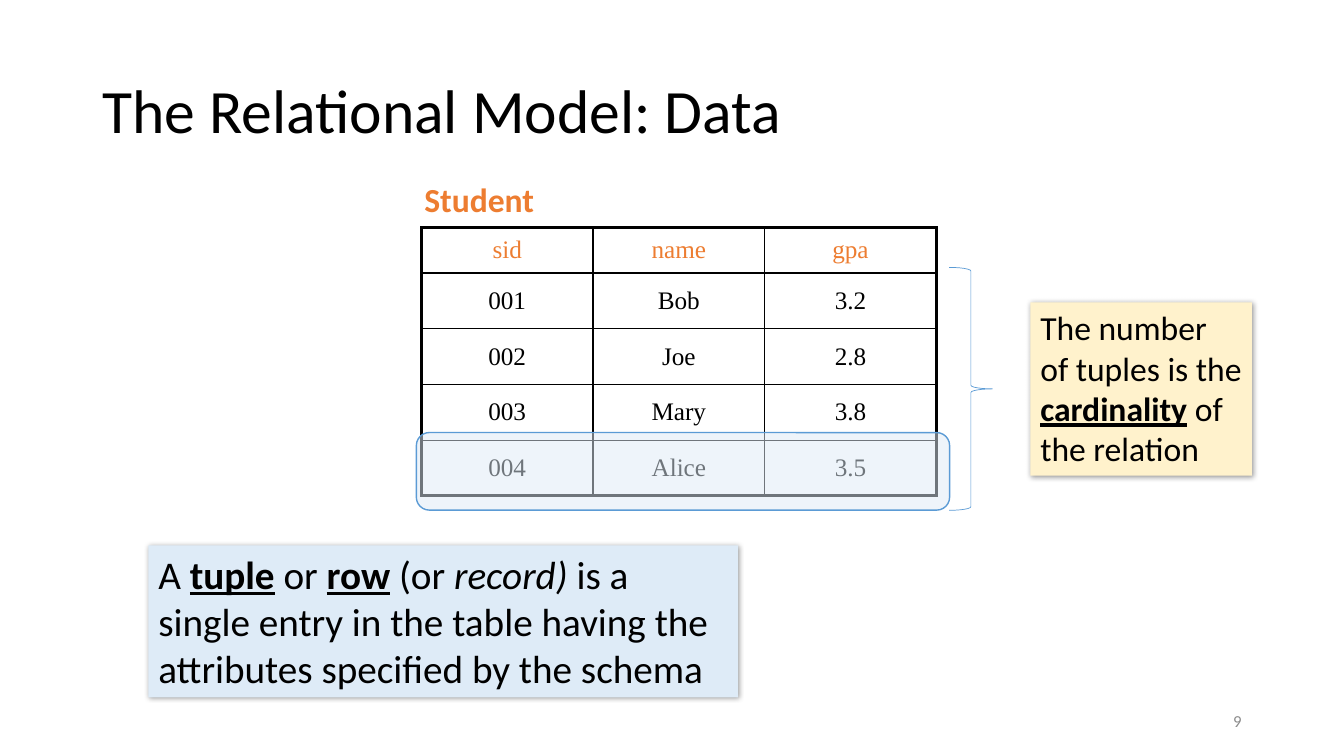
"""Build the slide on tuples and cardinality in the relational model."""
from dataclasses import dataclass

from lxml.etree import SubElement
from pptx import Presentation
from pptx.dml.color import RGBColor
from pptx.enum.shapes import MSO_SHAPE
from pptx.enum.text import MSO_ANCHOR, MSO_AUTO_SIZE, PP_ALIGN
from pptx.oxml import parse_xml
from pptx.oxml.ns import nsdecls, qn
from pptx.util import Pt


@dataclass(frozen=True)
class Theme:
    """Colours, fonts, type sizes and line widths of the slide."""
    ink: str = "000000"
    accent: str = "ED7D31"
    outline: str = "5B9BD5"
    blue_note: str = "DEEBF7"
    yellow_note: str = "FFF2CC"
    muted: str = "8C8C8C"
    body_font: str = "Calibri"
    table_font: str = "Times New Roman"
    title_size: float = 44
    definition_size: float = 28
    note_size: float = 24
    cell_size: float = 18
    number_size: float = 12
    thick: float = 2.25
    thin: float = 1
    brace_line: float = 0.5


THEME = Theme()
KEY_TERM = {"bold": True, "underline": True}
STUDENTS = [
    ("sid", "name", "gpa"),
    ("001", "Bob", "3.2"),
    ("002", "Joe", "2.8"),
    ("003", "Mary", "3.8"),
    ("004", "Alice", "3.5"),
]
DEFINITION = [
    ("A ", {}), ("tuple", KEY_TERM), (" or ", {}), ("row", KEY_TERM),
    (" (or ", {}), ("record) ", {"italic": True}),
    ("is a single entry in the table having the attributes specified by the schema", {}),
]
CARDINALITY = [
    ("The number of tuples is the ", {}), ("cardinality", KEY_TERM),
    (" of the relation", {}),
]


def apply(target, values):
    """Set each named attribute on the target."""
    for name, value in values.items():
        setattr(target, name, value)


def points(*lengths):
    """Turn numbers into point lengths."""
    return [Pt(length) for length in lengths]


def write(frame, runs, size, color=THEME.ink, font=THEME.body_font,
          align=PP_ALIGN.LEFT, **spacing):
    """Fill the first paragraph of a text frame with formatted runs."""
    paragraph = frame.paragraphs[0]
    apply(paragraph, {"alignment": align, **spacing})
    for text, emphasis in runs:
        run = paragraph.add_run()
        run.text = text
        apply(run.font, {"name": font, "size": Pt(size), **emphasis})
        run.font.color.rgb = RGBColor.from_string(color)


def add_title(slide, text):
    """Place and fill the title placeholder."""
    title = slide.shapes.title
    title.left, title.top, title.width, title.height = points(66, 28.8, 828, 104.4)
    apply(title.text_frame, {"vertical_anchor": MSO_ANCHOR.MIDDLE, "word_wrap": True})
    write(title.text_frame, [(text, {})], THEME.title_size, line_spacing=0.9)


def add_label(slide, bounds, text, size, color, frame_format, align=PP_ALIGN.LEFT, **emphasis):
    """Add a plain text box with one run."""
    frame = slide.shapes.add_textbox(*points(*bounds)).text_frame
    apply(frame, frame_format)
    write(frame, [(text, emphasis)], size, color, align=align)


def add_border(cell, side, width):
    """Draw one solid border of a table cell."""
    line = SubElement(cell._tc.get_or_add_tcPr(), qn(f"a:ln{side}"), w=str(Pt(width)))
    fill = SubElement(line, qn("a:solidFill"))
    SubElement(fill, qn("a:srgbClr"), val=THEME.ink)


def add_relation(slide, rows):
    """Add the relation with a heavy frame and a heavy rule under its header."""
    last_row, last_column = len(rows) - 1, len(rows[0]) - 1
    table = slide.shapes.add_table(
        len(rows), len(rows[0]), *points(301, 162.7, 368, 191.5)).table
    apply(table, {"first_row": False, "horz_banding": False})
    for column in table.columns:
        column.width = Pt(122.6)
    for r, values in enumerate(rows):
        table.rows[r].height = Pt(39.8 if r else 32.3)
        for c, value in enumerate(values):
            cell = table.cell(r, c)
            cell.vertical_anchor = MSO_ANCHOR.MIDDLE
            write(cell.text_frame, [(value, {})], THEME.cell_size,
                  THEME.ink if r else THEME.accent, THEME.table_font,
                  PP_ALIGN.CENTER, space_before=Pt(3.6))
            heavy = {"L": c == 0, "R": c == last_column,
                     "T": r <= 1, "B": r in (0, last_row)}
            for side, is_heavy in heavy.items():
                add_border(cell, side, THEME.thick if is_heavy else THEME.thin)
            cell.fill.background()


def add_outline(slide, preset, bounds, width):
    """Add an unfilled preset shape with a blue outline."""
    outline = slide.shapes.add_shape(preset, *points(*bounds))
    outline.shadow.inherit = False
    outline.fill.background()
    outline.line.color.rgb = RGBColor.from_string(THEME.outline)
    outline.line.width = Pt(width)
    return outline


def add_highlight(slide, bounds):
    """Add a half-transparent rounded band over one tuple."""
    band = add_outline(slide, MSO_SHAPE.ROUNDED_RECTANGLE, bounds, THEME.thin)
    band.fill.solid()
    band.fill.fore_color.rgb = RGBColor.from_string(THEME.blue_note)
    tint = band._element.spPr.find(f"{qn('a:solidFill')}/{qn('a:srgbClr')}")
    SubElement(tint, qn("a:alpha"), val="50000")


def add_note(slide, bounds, runs, size, fill):
    """Add a filled note with a soft shadow."""
    note = slide.shapes.add_shape(MSO_SHAPE.RECTANGLE, *points(*bounds))
    note.fill.solid()
    note.fill.fore_color.rgb = RGBColor.from_string(fill)
    note.line.fill.background()
    note._element.spPr.append(parse_xml(
        f'<a:effectLst {nsdecls("a")}><a:outerShdw blurRad="{Pt(4)}" dist="{Pt(1)}" '
        f'dir="2700000" algn="tl" rotWithShape="0"><a:srgbClr val="{THEME.ink}">'
        '<a:alpha val="40000"/></a:srgbClr></a:outerShdw></a:effectLst>'))
    apply(note.text_frame, {"word_wrap": True, "vertical_anchor": MSO_ANCHOR.TOP,
                            "auto_size": MSO_AUTO_SIZE.SHAPE_TO_FIT_TEXT})
    write(note.text_frame, runs, size)


def main():
    """Assemble the slide and save it."""
    deck = Presentation()
    deck.slide_width, deck.slide_height = points(960, 540)
    slide = deck.slides.add_slide(deck.slide_layouts[5])
    add_label(slide, (678, 500.5, 216, 28.75), "9", THEME.number_size, THEME.muted,
              {"word_wrap": True, "vertical_anchor": MSO_ANCHOR.MIDDLE}, PP_ALIGN.RIGHT)
    add_title(slide, "The Relational Model: Data")
    add_relation(slide, STUDENTS)
    add_label(slide, (296, 124, 94.3, 36), "Student", THEME.note_size, THEME.accent,
              {"word_wrap": False, "auto_size": MSO_AUTO_SIZE.SHAPE_TO_FIT_TEXT}, bold=True)
    brace = add_outline(slide, MSO_SHAPE.LEFT_BRACE, (678, 191, 31, 173.5), THEME.brace_line)
    brace.rotation = 180
    add_highlight(slide, (297.4, 309, 380.9, 55.4))
    add_note(slide, (106, 389.5, 421.2, 108.7), DEFINITION,
             THEME.definition_size, THEME.blue_note)
    add_note(slide, (736, 216, 158.2, 123.8), CARDINALITY,
             THEME.note_size, THEME.yellow_note)
    deck.save("out.pptx")


if __name__ == "__main__":
    main()
